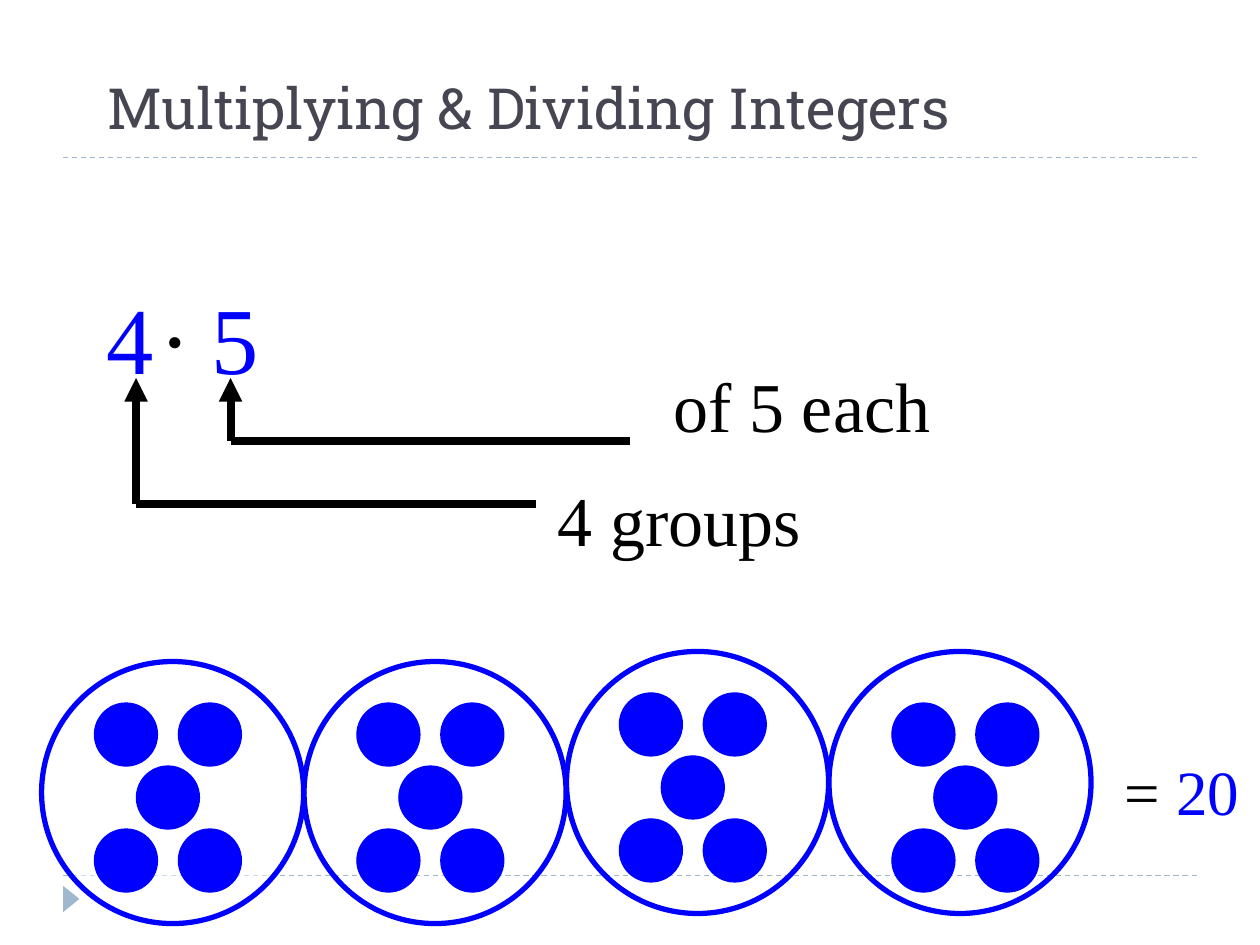
from lxml.etree import SubElement
from pptx import Presentation
from pptx.dml.color import RGBColor
from pptx.enum.dml import MSO_LINE
from pptx.enum.shapes import MSO_CONNECTOR, MSO_SHAPE
from pptx.enum.text import MSO_ANCHOR, MSO_AUTO_SIZE, PP_ALIGN
from pptx.oxml.ns import qn
from pptx.util import Inches, Pt

BLUE, BLACK, WHITE = "0000FF", "000000", "FFFFFF"
MIST, SLATE = "9FB8CD", "464653"
RING, DOT = 2.08, 0.5


def rgb(value):
    """Turn a hex string into a colour."""
    return RGBColor.from_string(value)


def set_attributes(target, values):
    """Set each named format value on the target."""
    for name, value in values.items():
        setattr(target, name, value)


def write(paragraph, text, size, color, font):
    """Add one formatted run to a paragraph."""
    run = paragraph.add_run()
    run.text = text
    set_attributes(run.font, {"name": font, "size": Pt(size), "bold": False})
    run.font.color.rgb = rgb(color)


def add_label(slide, box, size, *pieces):
    """Place a text box holding (text, colour) pieces on one line."""
    frame = slide.shapes.add_textbox(*map(Inches, box)).text_frame
    set_attributes(frame, {"word_wrap": True, "auto_size": MSO_AUTO_SIZE.SHAPE_TO_FIT_TEXT})
    paragraph = frame.paragraphs[0]
    paragraph.space_before = Pt(size * 0.1)
    for text, color in pieces:
        write(paragraph, text, size, color, "Times New Roman")


def add_line(slide, start, end, color, width, dash=None, arrow=False):
    """Draw a straight line, optionally dashed or with an arrowhead at its end."""
    line = slide.shapes.add_connector(MSO_CONNECTOR.STRAIGHT, *map(Inches, start + end))
    set_attributes(line.line, {"width": Pt(width), "dash_style": dash})
    line.line.color.rgb = rgb(color)
    properties = line._element.spPr
    if arrow:
        SubElement(properties.find(qn("a:ln")), qn("a:tailEnd"), type="triangle")
    SubElement(properties, qn("a:effectLst"))


def add_preset(slide, kind, box, fill=None, outline=None, width=0.75):
    """Draw a flat preset shape with the given fill and outline."""
    shape = slide.shapes.add_shape(kind, *map(Inches, box))
    shape.shadow.inherit = False
    for part, color in ((shape.fill, fill), (shape.line.fill, outline)):
        if color:
            part.solid()
            part.fore_color.rgb = rgb(color)
        else:
            part.background()
    if outline:
        shape.line.width = Pt(width)
    return shape


def add_frame(slide, left, top, width, height):
    """Draw the dashed rules and the corner marker."""
    for y in (top, top + height):
        add_line(slide, (left, y), (left + width, y), MIST, 0.75, MSO_LINE.DASH)
    marker = add_preset(slide, MSO_SHAPE.ISOSCELES_TRIANGLE,
                        (left - 0.04, top + height + 0.12, 0.21, 0.13), MIST)
    marker.rotation = 90


def add_title(slide, left, top, width, height):
    """Place and format the title."""
    title = slide.shapes.title
    set_attributes(title, {"left": Inches(left), "top": Inches(top),
                           "width": Inches(width), "height": Inches(height)})
    frame = title.text_frame
    set_attributes(frame, {"vertical_anchor": MSO_ANCHOR.BOTTOM, "word_wrap": True,
                           "auto_size": MSO_AUTO_SIZE.NONE})
    frame.paragraphs[0].alignment = PP_ALIGN.LEFT
    write(frame.paragraphs[0], "Multiplying & Dividing Integers", 32.4, SLATE, "Roboto Slab")


def add_expression(slide, left, top):
    """Write the product and point each factor to its meaning."""
    for column, (symbol, color) in enumerate((("4", BLUE), ("·", BLACK), ("5", BLUE))):
        add_label(slide, (left + column * 0.415, top, 0.67, 1), 54, (symbol, color))
    for x, drop in ((0.33, 1), (1.08, 0.5)):
        corner = (left + x, top + 0.83 + drop)
        add_line(slide, corner, (corner[0], top + 0.83), BLACK, 4.5, arrow=True)
        add_line(slide, corner, (corner[0] + 3.17, corner[1]), BLACK, 4.5)
    add_label(slide, (left + 4.5, top + 0.66, 2.75, 0.77), 40, ("of 5 each", BLACK))
    add_label(slide, (left + 3.58, top + 1.56, 2.75, 0.77), 40, ("4 groups", BLACK))


def add_group(slide, left, top, inset_x, inset_y, veiled):
    """Draw a ring around five dots set out as on a die."""
    ring = add_preset(slide, MSO_SHAPE.OVAL, (left, top, RING, RING),
                      WHITE if veiled else None, BLUE, 3)
    if veiled:
        veil = ring._element.spPr.find(qn("a:solidFill"))[0]
        SubElement(veil, qn("a:alpha"), val="50000")
    for column, row in ((0, 0), (2, 0), (1, 1), (0, 2), (2, 2)):
        x = left + inset_x + column * 0.333
        y = top + inset_y + row * 0.5
        add_preset(slide, MSO_SHAPE.OVAL, (x, y, DOT, DOT), BLUE, BLUE)


def add_groups(slide, left, top):
    """Draw the four groups in a row, followed by their total."""
    insets = ((0.08, 0.42, 0.33), (0.08, 0.42, 0.33), (0, 0.42, 0.33), (0, 0.5, 0.41))
    for index, (drop, inset_x, inset_y) in enumerate(insets):
        add_group(slide, left + index * 2.083, top + drop, inset_x, inset_y, index == 0)
    add_label(slide, (left + 8.5, top + 0.75, 1.83, 0.7), 36, ("= ", BLACK), ("20", BLUE))


def main():
    """Build and save the slide."""
    presentation = Presentation()
    set_attributes(presentation, {"slide_width": Inches(10), "slide_height": Inches(7.5)})
    slide = presentation.slides.add_slide(presentation.slide_layouts[5])
    add_frame(slide, 0.5, 1.25, 9, 5.7)
    add_title(slide, 0.75, 0.17, 7.51, 1)
    add_expression(slide, 0.75, 2.17)
    add_groups(slide, 0.33, 5.17)
    presentation.save("out.pptx")


if __name__ == "__main__":
    main()
